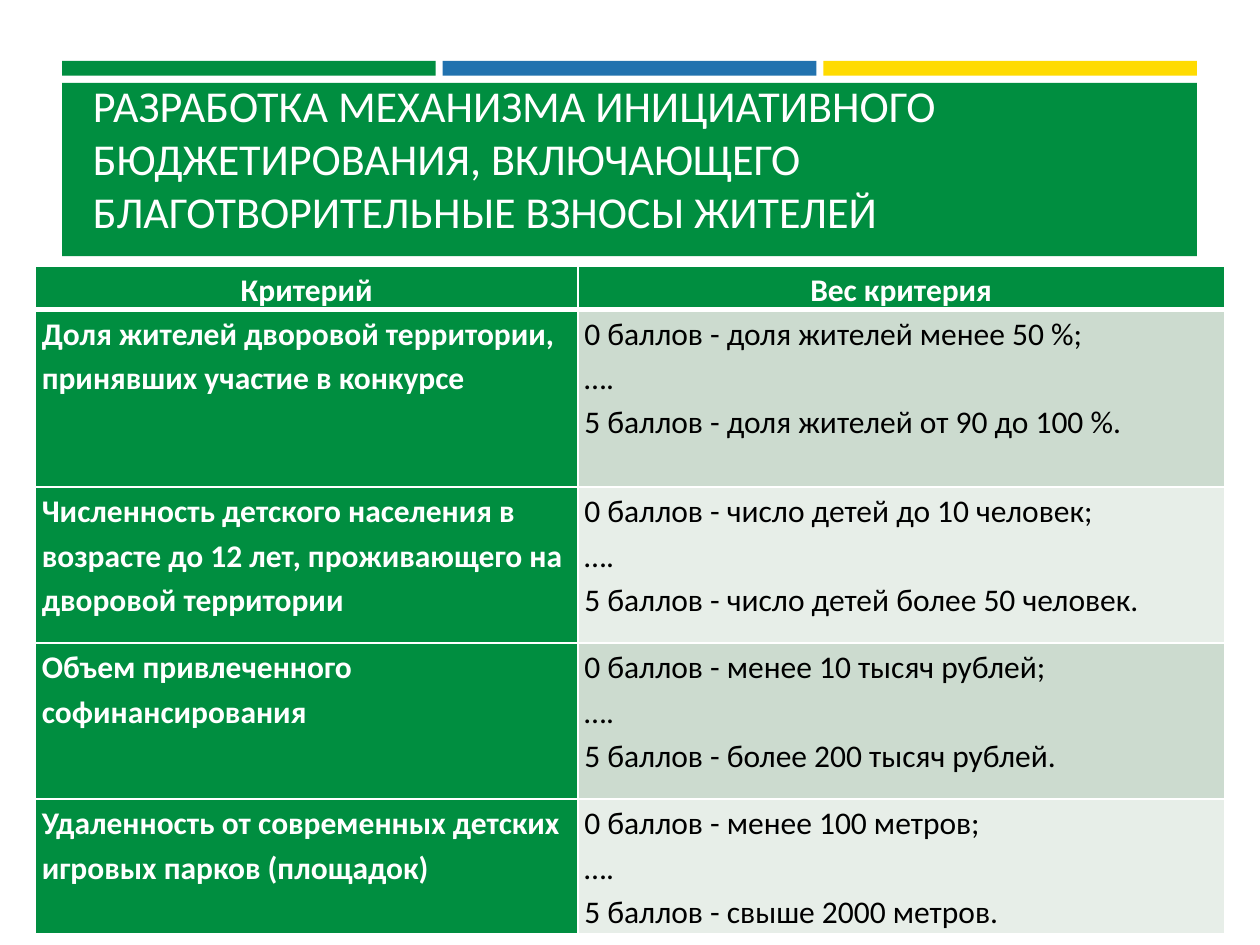
import dataclasses

import lxml.etree
import pptx
import pptx.dml.color
import pptx.enum.shapes
import pptx.enum.text
import pptx.oxml.ns
import pptx.util

Pt = pptx.util.Pt


@dataclasses.dataclass(frozen=True)
class Theme:
    green: str = "008E40"
    blue: str = "2172AF"
    yellow: str = "FFDB01"
    white: str = "FFFFFF"
    black: str = "000000"
    bands: tuple = ("CCDBCF", "E7EEE8")
    font: str = "Calibri"
    title_size: float = 25.2
    table_size: float = 18


theme = Theme()


def style_text(frame, size, color, bold=False):
    for para in frame.paragraphs:
        for span in para.runs:
            span.font.name = theme.font
            span.font.size = Pt(size)
            span.font.bold = bold
            span.font.color.rgb = pptx.dml.color.RGBColor.from_string(color)


def add_border(cell, side, width):
    properties = cell._tc.get_or_add_tcPr()
    line = lxml.etree.SubElement(
        properties, pptx.oxml.ns.qn("a:ln" + side), w=str(Pt(width)))
    fill = lxml.etree.SubElement(line, pptx.oxml.ns.qn("a:solidFill"))
    lxml.etree.SubElement(fill, pptx.oxml.ns.qn("a:srgbClr"), val=theme.white)


deck = pptx.Presentation()
deck.slide_width, deck.slide_height = Pt(720), Pt(540)
page = deck.slides.add_slide(deck.slide_layouts[6])

# Three-colour strip and title band
left, width, gap = 35.5, 648.5, 4
bar_width = (width - 2 * gap) / 3
blocks = [(left + i * (bar_width + gap), 34.8, bar_width, 8.4, color)
          for i, color in enumerate((theme.green, theme.blue, theme.yellow))]
blocks.append((left, 47.3, width, 99, theme.green))
for x, y, w, h, color in blocks:
    block = page.shapes.add_shape(
        pptx.enum.shapes.MSO_SHAPE.RECTANGLE, Pt(x), Pt(y), Pt(w), Pt(h))
    block.shadow.inherit = False
    block.fill.solid()
    block.fill.fore_color.rgb = pptx.dml.color.RGBColor.from_string(color)
    block.line.fill.background()

# Title
box = page.shapes.add_textbox(Pt(46), Pt(54), Pt(629), Pt(85))
frame = box.text_frame
frame.word_wrap = True
frame.vertical_anchor = pptx.enum.text.MSO_ANCHOR.BOTTOM
frame.text = ("РАЗРАБОТКА МЕХАНИЗМА ИНИЦИАТИВНОГО БЮДЖЕТИРОВАНИЯ, "
              "ВКЛЮЧАЮЩЕГО БЛАГОТВОРИТЕЛЬНЫЕ ВЗНОСЫ ЖИТЕЛЕЙ")
style_text(frame, theme.title_size, theme.white)

# Criteria table: \v breaks a line, \n starts a paragraph
rows = [
    ("Критерий", "Вес критерия"),
    ("Доля жителей дворовой территории, принявших участие в конкурсе",
     "0 баллов - доля жителей менее 50 %;\v….\n"
     "5 баллов - доля жителей от 90 до 100 %."),
    ("Численность детского населения в возрасте до 12 лет, "
     "проживающего на дворовой территории",
     "0 баллов - число детей до 10 человек;\v….\n"
     "5 баллов - число детей более 50 человек."),
    ("Объем привлеченного софинансирования",
     "0 баллов - менее 10 тысяч рублей;\v….\n"
     "5 баллов - более 200 тысяч рублей."),
    ("Удаленность от современных детских игровых парков (площадок)",
     "0 баллов - менее 100 метров;\v….\n"
     "5 баллов - свыше 2000 метров."),
]
row_heights = (23.4, 101.5, 89.2, 89.2, 77)
column_widths = (310, 369.4)
table = page.shapes.add_table(
    len(rows), 2, Pt(20.3), Pt(152), Pt(sum(column_widths)),
    Pt(sum(row_heights))).table
for column, column_width in zip(table.columns, column_widths):
    column.width = Pt(column_width)
for row, row_height in zip(table.rows, row_heights):
    row.height = Pt(row_height)

for r, texts in enumerate(rows):
    for c, text in enumerate(texts):
        cell = table.cell(r, c)
        header = r == 0
        strong = header or c == 0
        cell.margin_left = cell.margin_right = Pt(3.6)
        cell.margin_top = cell.margin_bottom = 0
        cell.vertical_anchor = (pptx.enum.text.MSO_ANCHOR.MIDDLE if header
                                else pptx.enum.text.MSO_ANCHOR.TOP)
        for side in "LRTB":
            thick = (r, side) in ((0, "B"), (1, "T"))
            add_border(cell, side, 3 if thick else 1)
        cell.fill.solid()
        cell.fill.fore_color.rgb = pptx.dml.color.RGBColor.from_string(
            theme.green if strong else theme.bands[(r - 1) % 2])
        cell.text_frame.text = text
        for para in cell.text_frame.paragraphs:
            para.line_spacing = 1.15
            para.alignment = (pptx.enum.text.PP_ALIGN.CENTER if header
                              else pptx.enum.text.PP_ALIGN.LEFT)
        style_text(cell.text_frame, theme.table_size,
                   theme.white if strong else theme.black, strong)

deck.save("out.pptx")
